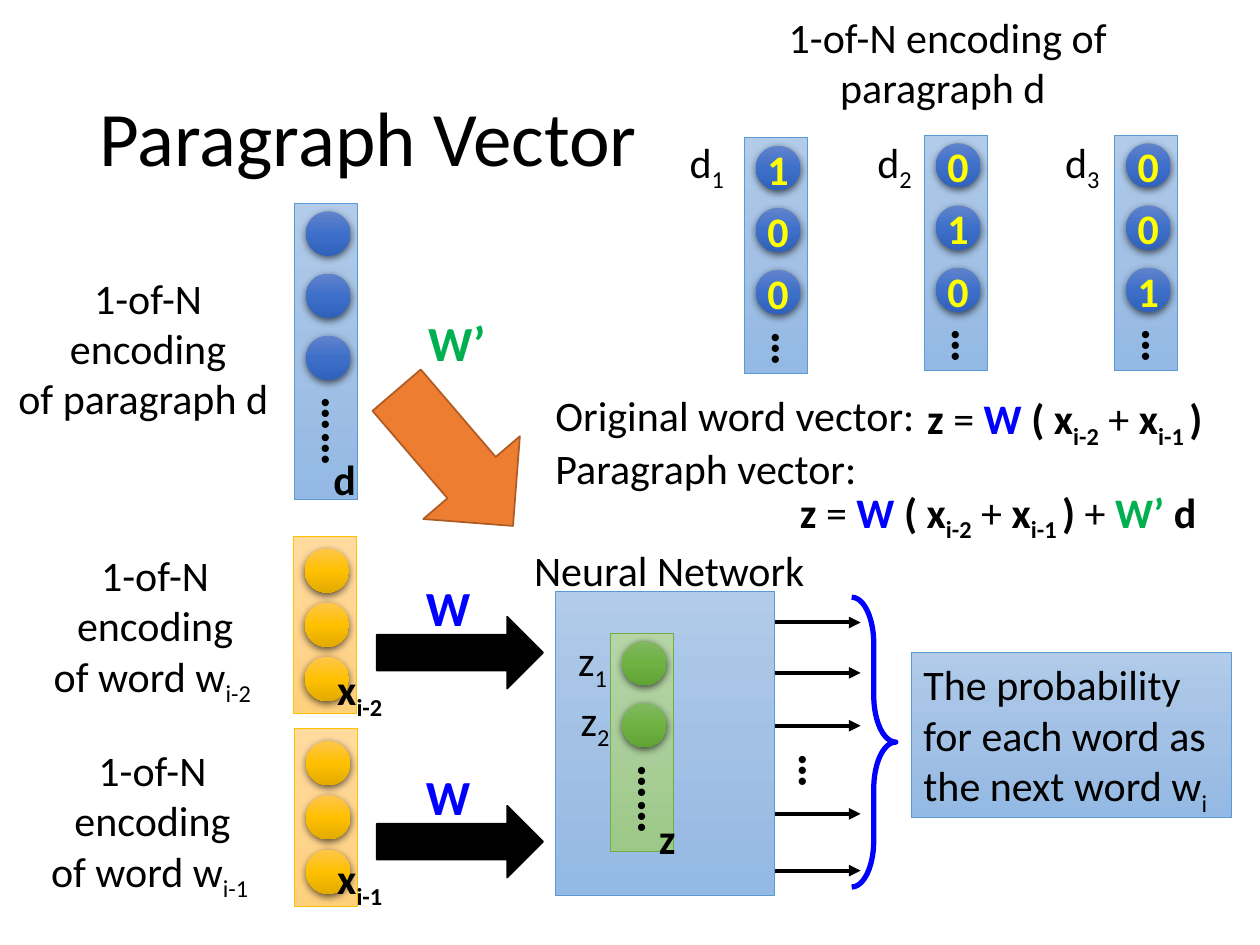
"""Build the Paragraph Vector slide."""
from copy import deepcopy

from lxml.etree import SubElement
from pptx import Presentation
from pptx.dml.color import RGBColor
from pptx.enum.shapes import MSO_CONNECTOR, MSO_SHAPE
from pptx.enum.text import MSO_ANCHOR, MSO_AUTO_SIZE, PP_ALIGN
from pptx.oxml.ns import qn
from pptx.util import Pt

BLACK = RGBColor(0, 0, 0)
BLUE = RGBColor(0, 0, 0xFF)
GREEN = RGBColor(0, 0xB0, 0x50)
YELLOW = RGBColor(0xFF, 0xFF, 0)
ORANGE = RGBColor(0xED, 0x7D, 0x31)
RUST = RGBColor(0xAF, 0x5C, 0x24)

THEMES = {
    "blue": {"edge": "5B9BD5", "bar": "B1CBE9 A3C1E5 93B9E4", "dot": "6183CB 3E70CA 3062BB"},
    "gold": {"edge": "FFC000", "bar": "FFDB9E FFD590 FFD07C", "dot": "FFC64B FFC000 E3AB00"},
    "green": {"edge": "70AD47", "bar": "B5D5A7 AACE9A 9CC987", "dot": "81B861 6FB242 62A336"},
}
STYLES = {
    "plain": (False, BLACK, False), "bold": (True, BLACK, False),
    "sub": (False, BLACK, True), "boldsub": (True, BLACK, True),
    "blue": (True, BLUE, False), "green": (True, GREEN, False),
    "yellow": (True, YELLOW, False),
}
LEFT, MID = PP_ALIGN.LEFT, PP_ALIGN.CENTER

SUM = [("z ", "bold"), ("= ", "plain"), ("W ", "blue"), ("( x", "bold"),
       ("i-2", "boldsub"), (" +", "plain"), (" x", "bold"), ("i-1 ", "boldsub")]
LABELS = [
    ((323.3, 359.3, 43.2, 36), 24, LEFT, [[("z", "plain"), ("1", "sub")]]),
    ((324.7, 393.1, 43.2, 36), 24, LEFT, [[("z", "plain"), ("2", "sub")]]),
    ((298.1, 307.4, 174.2, 36), 24, LEFT, [[("Neural Network", "plain")]]),
    ((0.7, 151.9, 167.8, 94.3), 24, MID,
     [[("1-of-N encoding", "plain")], [("of paragraph d ", "plain")]]),
    ((237.6, 175, 49, 41), 28, LEFT, [[("W’", "green")]]),
    ((175.7, 255.6, 42.5, 36), 24, MID, [[("d", "bold")]]),
    ((360, 460.8, 42.5, 36), 24, MID, [[("z", "bold")]]),
    ((412.6, 2.9, 257.8, 65.5), 24, MID, [[("1-of-N encoding of paragraph d ", "plain")]]),
    ((522.7, 221, 190.8, 36), 24, LEFT, [[*SUM, (")", "bold")]]),
    ((430.6, 274.3, 279.4, 36), 24, MID,
     [[*SUM, (") ", "bold"), ("+ ", "plain"), ("W’ ", "green"), ("d", "bold")]]),
    ((310.3, 218.9, 229, 36), 24, LEFT, [[("Original word vector:", "plain")]]),
    ((310.3, 249.1, 229, 36), 24, LEFT, [[("Paragraph vector:", "plain")]]),
]
WORDS = [("i-2 ", (13.7, 310.3), (185.4, 306.4)), ("i-1 ", (12.2, 421.9), (186.1, 416.5))]
CODES = [("100", 443.2, 78.8), ("010", 546.1, 77.4), ("001", 654.8, 77.4)]
OUTS = [355.7, 384.5, 414.7, 465.1, 497.5]
GUESS = [[("The probability for each word as the next word w", "plain"), ("i", "sub")]]
DOT, WIDE = 25.2, 36


def apply(item, vals):
    for name, val in vals.items():
        setattr(item, name, val)


def write(frame, paras, size, align):
    for i, runs in enumerate(paras):
        para = frame.paragraphs[0] if i == 0 else frame.add_paragraph()
        para.alignment = align
        for text, style in runs:
            bold, color, low = STYLES[style]
            run = para.add_run()
            run.text = text
            apply(run.font, {"name": "Calibri", "size": Pt(size), "bold": bold})
            run.font.color.rgb = color
            if low:
                run.font._element.set("baseline", "-25000")


def label(box, size, align, paras, turn=0):
    item = shapes.add_textbox(*map(Pt, box))
    item.rotation = turn
    apply(item.text_frame, {"word_wrap": True, "auto_size": MSO_AUTO_SIZE.SHAPE_TO_FIT_TEXT})
    write(item.text_frame, paras, size, align)


def solid(kind, box, fill, edge, width):
    item = shapes.add_shape(kind, *map(Pt, box))
    item.shadow.inherit = False
    if fill is None:
        item.fill.background()
    else:
        item.fill.solid()
        item.fill.fore_color.rgb = fill
    item.line.color.rgb = edge
    item.line.width = Pt(width)
    return item


def shade(kind, box, colors, edge=None, turn=0):
    item = shapes.add_shape(kind, *map(Pt, box))
    item.rotation = turn
    item.shadow.inherit = False
    item.fill.gradient()
    item.fill.gradient_angle = 270
    grad = item._element.spPr.find(qn("a:gradFill"))
    grad.set("rotWithShape", "0")
    stops = grad.find(qn("a:gsLst"))
    stops.insert(1, deepcopy(stops[0]))
    stops[1].set("pos", "50000")
    for stop, color in zip(item.fill.gradient_stops, colors.split()):
        stop.color.rgb = RGBColor.from_string(color)
    if edge:
        item.line.color.rgb = RGBColor.from_string(edge)
        item.line.width = Pt(0.5)
    else:
        item.line.fill.background()
    return item


def bead(box, colors):
    item = shade(MSO_SHAPE.OVAL, box, colors, turn=90)
    glow = SubElement(item._element.spPr.find(qn("a:effectLst")), qn("a:outerShdw"),
                      blurRad="57150", dist="19050", dir="5400000", algn="ctr", rotWithShape="0")
    tint = SubElement(glow, qn("a:srgbClr"), val="000000")
    SubElement(tint, qn("a:alpha"), val="63000")


def column(mid, top, tall, theme, count, step, pad=4.5, dots="", digits=""):
    look = THEMES[theme]
    shade(MSO_SHAPE.RECTANGLE, (mid - tall / 2, top + tall / 2 - WIDE / 2, tall, WIDE),
          look["bar"], look["edge"], 90)
    axis = mid + 1.4
    tops = [top + pad + i * step for i in range(count)]
    for y in tops:
        bead((axis - DOT / 2, y, DOT, DOT), look["dot"])
    if dots:
        long, high = 67, 26.6 if len(dots) > 1 else 41
        start = top + pad + count * step - 7.5
        label((mid + 29.5 - high / 2 - long / 2, start + long / 2 - high / 2, long, high),
              28, LEFT, [[(dots, "bold")]], 90)
    for y, digit in zip(tops, digits):
        label((axis - 16.2, y - 5, 32.4, 36), 24, MID, [[(digit, "yellow")]])


def wire(y):
    line = shapes.add_connector(MSO_CONNECTOR.STRAIGHT, Pt(432), Pt(y), Pt(491.8), Pt(y))
    line.line.color.rgb = BLACK
    line.line.width = Pt(2.25)
    SubElement(line.line._get_or_add_ln(), qn("a:tailEnd"), type="triangle")
    SubElement(line._element.spPr, qn("a:effectLst"))


deck = Presentation()
apply(deck, {"slide_width": Pt(720), "slide_height": Pt(540)})
slide = deck.slides.add_slide(deck.slide_layouts[5])
shapes = slide.shapes

title = shapes.title
apply(title, {"left": Pt(49.7), "top": Pt(28.8), "width": Pt(620.6), "height": Pt(104.4)})
title.text_frame.vertical_anchor = MSO_ANCHOR.MIDDLE
write(title.text_frame, [[("Paragraph Vector", "plain")]], 44, LEFT)
title.text_frame.paragraphs[0].line_spacing = 0.9

for y in OUTS:
    wire(y)
label((447.1, 423.4, 41, 41), 28, LEFT, [[("…", "bold")]], 90)
blue = THEMES["blue"]
shade(MSO_SHAPE.RECTANGLE, (317.5, 337.7, 125.3, 174.2), blue["bar"], blue["edge"])
brace = solid(MSO_SHAPE.LEFT_BRACE, (486.7, 341.3, 25.2, 165.6), None, BLUE, 3)
brace.adjustments[0] = 1.05
brace._element.spPr.find(qn("a:xfrm")).set("flipH", "1")

column(366.8, 361.8, 124.6, "green", 2, 35.5, dots="……")
column(186.1, 116.3, 169.2, "blue", 3, 35.5, dots="……")
big = solid(MSO_SHAPE.RIGHT_ARROW, (208.8, 225.4, 102.2, 72.7), ORANGE, RUST, 1)
big.rotation = 49.4

for i, (tag, (x, y), (mid, top)) in enumerate(WORDS):
    drop = i * 108
    column(mid, top, 101.5, "gold", 3, 31, pad=7)
    label((x, y, 149.8, 94.3), 24, MID,
          [[("1-of-N encoding", "plain")], [("of word w", "plain"), (tag, "sub")]])
    solid(MSO_SHAPE.RIGHT_ARROW, (215.3, 352.5 + drop, 95, 41), BLACK, BLACK, 1)
    label((236.2, 326.2 + drop, 32.4, 41), 28, LEFT, [[("W", "blue")]])
    label((184.3, 375.8 + drop, 42.5, 36), 24, MID, [[("x", "bold"), (tag, "boldsub")]])

for i, (digits, mid, top) in enumerate(CODES):
    column(mid, top, 134.6, "blue", 3, 35.5, dots="…", digits=digits)
    label((371.5 + i * 107.3, 74.3, 64.8, 36), 24, MID,
          [[("d", "plain"), (str(i + 1), "sub")]])

guess = shade(MSO_SHAPE.RECTANGLE, (520.6, 373, 182.9, 94.3), blue["bar"], blue["edge"])
apply(guess.text_frame, {"word_wrap": True, "vertical_anchor": MSO_ANCHOR.TOP})
write(guess.text_frame, GUESS, 24, LEFT)

for box, size, align, paras in LABELS:
    label(box, size, align, paras)

deck.save("out.pptx")
